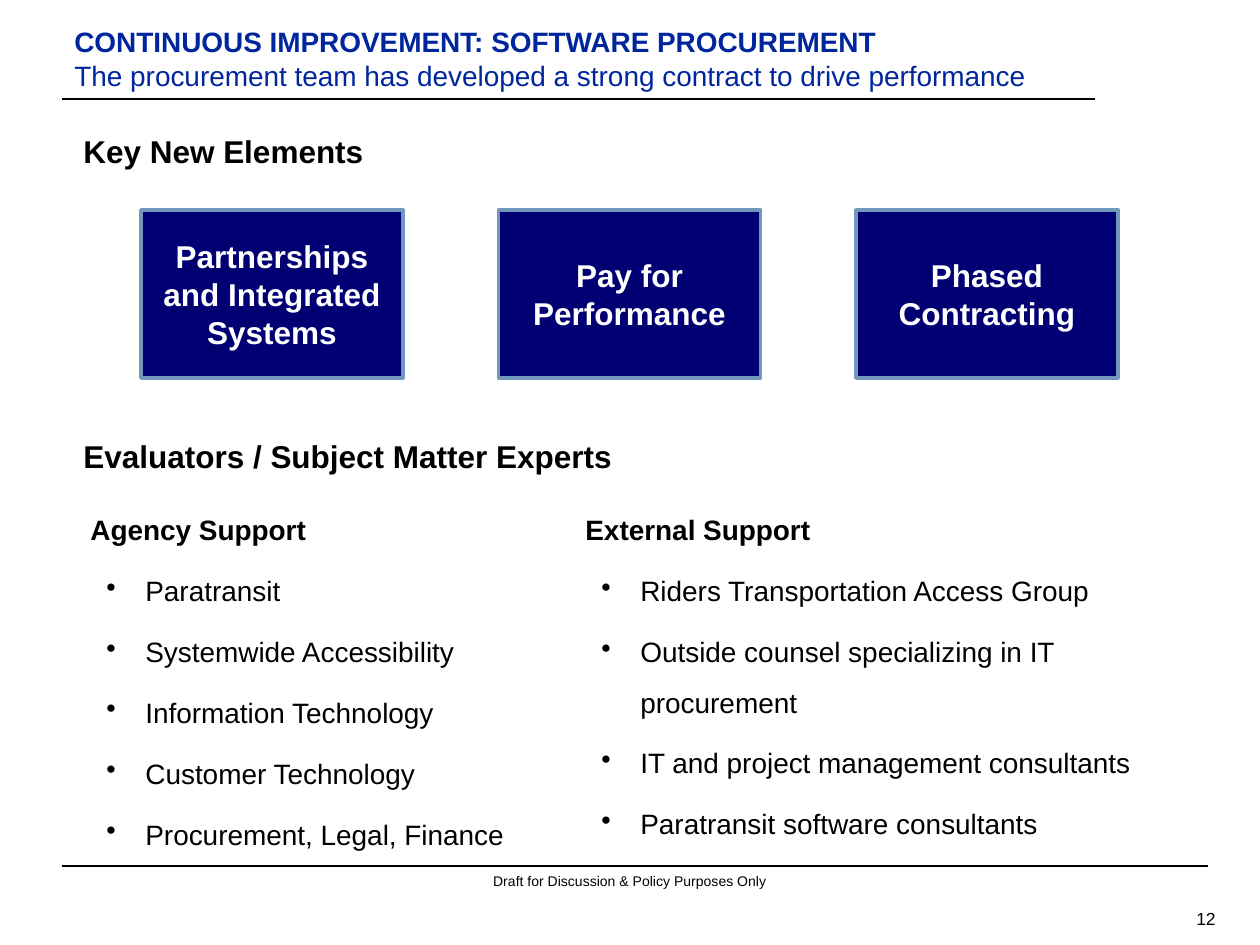
import pptx
import pptx.dml.color
import pptx.enum.shapes
import pptx.enum.text
import pptx.oxml.ns
import pptx.util
from lxml import etree

RGBColor = pptx.dml.color.RGBColor
ALIGN = pptx.enum.text.PP_ALIGN
ANCHOR = pptx.enum.text.MSO_ANCHOR

BLACK = RGBColor(0x00, 0x00, 0x00)
WHITE = RGBColor(0xFF, 0xFF, 0xFF)
TITLE_BLUE = RGBColor(0x00, 0x26, 0x9E)
NAVY = RGBColor(0x00, 0x00, 0x73)
STEEL = RGBColor(0x71, 0x97, 0xBD)

PX_PER_INCH = 126
FONT = "Arial"

ELEMENTS = ["Partnerships and Integrated Systems", "Pay for Performance", "Phased Contracting"]
AGENCY_SUPPORT = ["Paratransit", "Systemwide Accessibility", "Information Technology",
                  "Customer Technology", "Procurement, Legal, Finance"]
EXTERNAL_SUPPORT = ["Riders Transportation Access Group",
                    "Outside counsel specializing in IT procurement",
                    "IT and project management consultants",
                    "Paratransit software consultants"]


def px(length):
    return pptx.util.Emu(round(length * 914400 / PX_PER_INCH))


def add_text(frame, text, size=16, color=BLACK, bold=False, align=ALIGN.LEFT,
             indent=0, hanging=0, bullet=False, line_spacing=None, space_before=0):
    """Fill the frame's empty first paragraph, or append a new one."""
    paragraph = frame.paragraphs[0]
    is_first = not paragraph.runs
    if not is_first:
        paragraph = frame.add_paragraph()
        paragraph.space_before = pptx.util.Pt(space_before)
    properties = paragraph._p.get_or_add_pPr()
    properties.set("marL", str(px(indent)))
    properties.set("indent", str(-px(hanging)))
    paragraph.alignment = align
    if line_spacing:
        paragraph.line_spacing = line_spacing
    if bullet:
        mark = etree.SubElement(properties, pptx.oxml.ns.qn("a:buChar"))
        mark.set("char", "•")
    run = paragraph.add_run()
    run.text = text
    run.font.name = FONT
    run.font.size = pptx.util.Pt(size)
    run.font.bold = bold
    run.font.color.rgb = color


def add_text_box(slide, left, top, width, height, anchor=ANCHOR.TOP):
    frame = slide.shapes.add_textbox(px(left), px(top), px(width), px(height)).text_frame
    frame.word_wrap = True
    frame.vertical_anchor = anchor
    return frame


def add_rule(slide, left, top, width, weight):
    rule = slide.shapes.add_connector(pptx.enum.shapes.MSO_CONNECTOR.STRAIGHT,
                                      px(left), px(top), px(left + width), px(top))
    rule.line.color.rgb = BLACK
    rule.line.width = pptx.util.Pt(weight)
    etree.SubElement(rule._element.spPr, pptx.oxml.ns.qn("a:effectLst"))


def add_header(slide, left, top, width, height):
    frame = add_text_box(slide, left, top, width, height, ANCHOR.BOTTOM)
    add_text(frame, "CONTINUOUS IMPROVEMENT: SOFTWARE PROCUREMENT", color=TITLE_BLUE, bold=True)
    add_text(frame, "The procurement team has developed a strong contract to drive performance",
             color=TITLE_BLUE)
    add_rule(slide, left, top + height + 1, 1033, 1)


def add_heading(slide, text, left, top, width, height):
    frame = add_text_box(slide, left, top, width, height)
    add_text(frame, text, size=18, bold=True, indent=9)


def add_element_boxes(slide, left, top, width, height):
    """Spread the boxes evenly from the left edge to the right edge."""
    box_width = 262
    step = (width - box_width) / (len(ELEMENTS) - 1)
    for index, text in enumerate(ELEMENTS):
        box = slide.shapes.add_shape(pptx.enum.shapes.MSO_SHAPE.RECTANGLE,
                                     px(left + index * step), px(top), px(box_width), px(height))
        box.shadow.inherit = False
        box.fill.solid()
        box.fill.fore_color.rgb = NAVY
        box.line.color.rgb = STEEL
        box.line.width = pptx.util.Pt(2)
        box.text_frame.word_wrap = True
        box.text_frame.vertical_anchor = ANCHOR.MIDDLE
        add_text(box.text_frame, text, size=18, color=WHITE, bold=True, align=ALIGN.CENTER)


def add_support_list(slide, title, items, left, top, width, height):
    frame = add_text_box(slide, left, top, width, height)
    add_text(frame, title, bold=True, indent=16, line_spacing=1.5)
    for item in items:
        add_text(frame, item, indent=71, hanging=39, bullet=True,
                 line_spacing=1.5, space_before=6)


def add_footer(slide, left, top, width):
    add_rule(slide, left, top, width, 0.75)
    note = add_text_box(slide, left + 388, top, 360, 30)
    add_text(note, "Draft for Discussion & Policy Purposes Only", size=8, align=ALIGN.CENTER)
    number = add_text_box(slide, left + 1061, top + 37, 105, 31, ANCHOR.MIDDLE)
    add_text(number, "12", size=10, align=ALIGN.RIGHT)


def main():
    presentation = pptx.Presentation()
    presentation.slide_width = px(1260)
    presentation.slide_height = px(945)
    slide = presentation.slides.add_slide(presentation.slide_layouts[6])

    add_footer(slide, 62, 866, 1146)
    add_header(slide, 62, 34, 1068, 64)
    add_heading(slide, "Key New Elements", 62, 126, 527, 50)
    add_element_boxes(slide, 141, 210, 977, 168)
    add_heading(slide, "Evaluators / Subject Matter Experts", 62, 431, 1135, 62)
    add_support_list(slide, "Agency Support", AGENCY_SUPPORT, 62, 490, 495, 372)
    add_support_list(slide, "External Support", EXTERNAL_SUPPORT, 557, 490, 661, 360)

    presentation.save("out.pptx")


if __name__ == "__main__":
    main()
